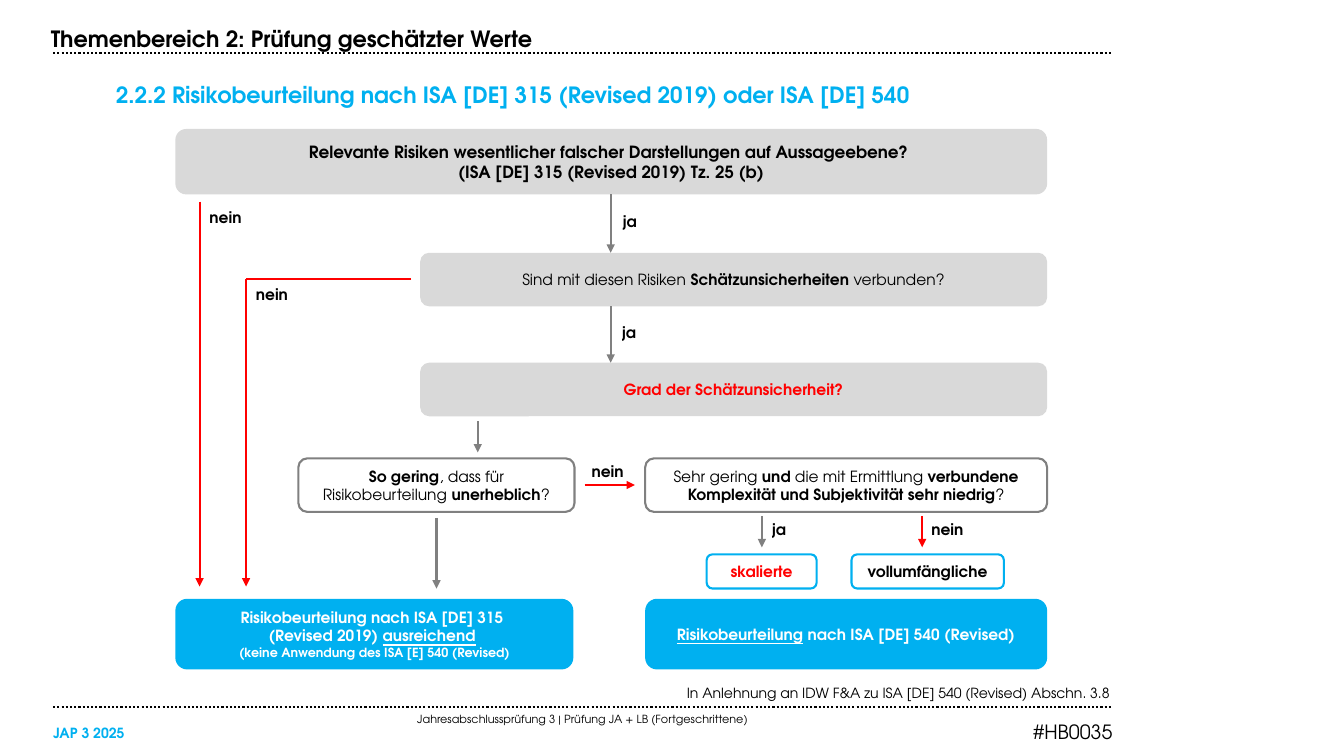
from lxml import etree
from pptx import Presentation
from pptx.dml.color import RGBColor
from pptx.enum.dml import MSO_LINE
from pptx.enum.shapes import MSO_CONNECTOR, MSO_SHAPE
from pptx.enum.text import MSO_ANCHOR, MSO_AUTO_SIZE, PP_ALIGN
from pptx.oxml.ns import qn
from pptx.util import Cm, Pt

STRAIGHT = MSO_CONNECTOR.STRAIGHT
ROUNDED = MSO_SHAPE.ROUNDED_RECTANGLE
DOTTED = MSO_LINE.ROUND_DOT
TOP, MIDDLE = MSO_ANCHOR.TOP, MSO_ANCHOR.MIDDLE
LEFT, CENTER, RIGHT = PP_ALIGN.LEFT, PP_ALIGN.CENTER, PP_ALIGN.RIGHT
NO_AUTOFIT = MSO_AUTO_SIZE.NONE

FONT = "TeX Gyre Adventor"
BLACK, WHITE, RED, BLUE = "000000", "FFFFFF", "FF0000", "00B0F0"
GREY, LIGHT = "808080", "D9D9D9"
BOLD, PLAIN = {"bold": True}, {"bold": False}
UNDERLINED = {"bold": True, "underline": True}


def rgb(value):
    return RGBColor.from_string(value)


def write(shape, runs, size, color=BLACK, align=LEFT, anchor=TOP, inset=True):
    """Fill one paragraph with (text, font values) runs; \\n is a line break."""
    tf = shape.text_frame
    frame = {"word_wrap": True, "auto_size": NO_AUTOFIT, "vertical_anchor": anchor}
    if not inset:
        frame.update(dict.fromkeys(
            ("margin_left", "margin_top", "margin_right", "margin_bottom"), 0))
    for name, value in frame.items():
        setattr(tf, name, value)
    p = tf.paragraphs[0]
    p.alignment = align
    for text, extra in runs:
        for i, part in enumerate(text.split("\n")):
            if i:
                p.add_line_break()
            if not part:
                continue
            r = p.add_run()
            r.text = part
            values = {"name": FONT, "size": Pt(size), "bold": False, **extra}
            for name, value in values.items():
                setattr(r.font, name, value)
            r.font.color.rgb = rgb(color)


def add_text(s, box, runs, size, **style):
    sp = s.shapes.add_textbox(*map(Cm, box))
    write(sp, runs, size, **style)


def add_line(s, start, end, color, arrow=False, dash=None):
    line = s.shapes.add_connector(STRAIGHT, *map(Cm, (*start, *end)))
    line.line.color.rgb = rgb(color)
    line.line.width = Pt(1.5)
    if dash:
        line.line.dash_style = dash
    if arrow:
        ln = line.line._get_or_add_ln()
        etree.SubElement(ln, qn("a:tailEnd"), type="triangle")
    etree.SubElement(line._element.spPr, qn("a:effectLst"))


def add_node(s, box, runs, size=11, fill=None, outline=None, color=BLACK):
    sp = s.shapes.add_shape(ROUNDED, *map(Cm, box))
    sp.shadow.inherit = False
    if fill:
        sp.fill.solid()
        sp.fill.fore_color.rgb = rgb(fill)
    else:
        sp.fill.background()
    if outline:
        sp.line.color.rgb = rgb(outline)
        sp.line.width = Pt(1.5)
    else:
        sp.line.fill.background()
    write(sp, runs, size, color=color, align=CENTER, anchor=MIDDLE)


def header(s, box):
    x, y, w, h = box
    add_line(s, (x, y + h), (x + w, y + h), BLACK, dash=DOTTED)
    add_text(s, (x - 0.31, y, w + 1.12, 0.94),
             [("Themenbereich 2: Prüfung geschätzter Werte", BOLD)], 16)


def title(s, box):
    sp = s.shapes.title
    sp.left, sp.top, sp.width, sp.height = map(Cm, box)
    text = "2.2.2 Risikobeurteilung nach ISA [DE] 315 (Revised 2019) oder ISA [DE] 540"
    write(sp, [(text, BOLD)], 16, color=BLUE, anchor=MIDDLE, inset=False)


def flowchart(s, box):
    x, y, w, h = box
    half, right = 10.03, 11.84            # left column width, right column start
    step_x, step_w, step_h = 6.17, w - 6.17, 1.35
    result_y, result_h = h - 1.78, 1.78

    # Question, decision and result boxes
    nodes = [
        ((0, 0, w, 1.65), dict(fill=LIGHT, size=12), [
            ("Relevante Risiken wesentlicher falscher Darstellungen auf Aussageebene? \n"
             "(ISA [DE] 315 (Revised 2019) Tz. 25 (b)", BOLD)]),
        ((step_x, 3.12, step_w, step_h), dict(fill=LIGHT), [
            ("Sind mit diesen Risiken ", PLAIN), ("Schätzunsicherheiten", BOLD),
            (" verbunden?", PLAIN)]),
        ((step_x, 5.89, step_w, step_h), dict(fill=LIGHT, color=RED), [
            ("Grad der Schätzunsicherheit?", BOLD)]),
        ((3.1, 8.3, 6.96, step_h), dict(outline=GREY), [
            ("So gering", BOLD), (", dass für Risikobeurteilung ", PLAIN),
            ("unerheblich", BOLD), ("?", PLAIN)]),
        ((right, 8.3, w - right, step_h), dict(outline=GREY), [
            ("Sehr gering ", PLAIN), ("und", BOLD), (" die mit Ermittlung ", PLAIN),
            ("verbundene Komplexität und Subjektivität sehr niedrig", BOLD),
            ("?", PLAIN)]),
        ((13.39, 10.72, 2.77, 0.86), dict(outline=BLUE, color=RED), [
            ("skalierte", BOLD)]),
        ((17.04, 10.72, 3.84, 0.86), dict(outline=BLUE), [
            ("vollumfängliche", BOLD)]),
        ((0, result_y, half, result_h), dict(fill=BLUE, color=WHITE), [
            ("Risikobeurteilung nach ISA [DE] 315 \n(Revised 2019) ", BOLD),
            ("ausreichend", UNDERLINED), (" \n", BOLD),
            ("(keine Anwendung des ISA [E] 540 (Revised)",
             {"bold": True, "size": Pt(9)})]),
        ((right, result_y, w - right, result_h), dict(fill=BLUE, color=WHITE), [
            ("Risikobeurteilung", UNDERLINED), (" ", PLAIN),
            ("nach ISA [DE] 540 (Revised)", BOLD)]),
    ]
    for (nx, ny, nw, nh), style, runs in nodes:
        add_node(s, (x + nx, y + ny, nw, nh), runs, **style)

    # Paths: start, end, colour, arrowhead
    paths = [
        ((10.97, 1.65), (10.97, 3.12), GREY, True),
        ((10.97, 4.47), (10.97, 5.89), GREY, True),
        ((7.62, 7.37), (7.62, 8.15), GREY, True),
        ((6.58, 9.8), (6.58, 11.58), GREY, True),
        ((14.78, 9.75), (14.78, 10.54), GREY, True),
        ((18.82, 9.75), (18.82, 10.54), RED, True),
        ((10.31, 8.97), (11.58, 8.97), RED, True),
        ((0.61, 1.83), (0.61, 11.53), RED, True),
        ((5.94, 3.78), (1.78, 3.78), RED, False),
        ((1.78, 3.78), (1.78, 11.53), RED, True),
    ]
    for (x1, y1), (x2, y2), color, arrow in paths:
        add_line(s, (x + x1, y + y1), (x + x2, y + y2), color, arrow)

    # Answers beside the paths
    answers = {
        "ja": [(11.02, 1.98), (11, 4.78), (14.78, 9.73)],
        "nein": [(0.61, 1.88), (1.78, 3.81), (10.24, 8.26), (18.8, 9.73)],
    }
    for answer, places in answers.items():
        for ax, ay in places:
            add_text(s, (x + ax, y + ay, 1.37, 0.74), [(answer, BOLD)], 11)


def footer(s, box):
    x, y, w, h = box
    add_text(s, (x + 15.72, y, 11.76, 0.69),
             [("In Anlehnung an IDW F&A zu ISA [DE] 540 (Revised) Abschn. 3.8", PLAIN)], 10)
    add_line(s, (x, y + 0.69), (x + w, y + 0.69), BLACK, dash=DOTTED)
    add_text(s, (x, y + 0.84, w, 0.33),
             [("Jahresabschlussprüfung 3 | Prüfung JA + LB (Fortgeschrittene)", PLAIN)],
             8, align=CENTER, anchor=MIDDLE, inset=False)
    add_text(s, (x, y + h - 0.69, 2.67, 0.69), [("JAP 3 2025", BOLD)], 10,
             color=BLUE, anchor=MIDDLE, inset=False)
    add_text(s, (x + w - 3.81, y + h - 0.69, 3.81, 0.76), [("#HB0035", PLAIN)], 14,
             align=RIGHT, inset=False)


def main():
    prs = Presentation()
    prs.slide_width, prs.slide_height = Cm(33.87), Cm(19.05)
    s = prs.slides.add_slide(prs.slide_layouts[5])
    header(s, (1.34, 0.51, 26.7, 0.83))
    title(s, (2.92, 1.93, 30, 0.89))
    flowchart(s, (4.42, 3.25, 21.97, 13.62))
    footer(s, (1.34, 17.12, 26.7, 1.7))
    prs.save("out.pptx")


if __name__ == "__main__":
    main()
